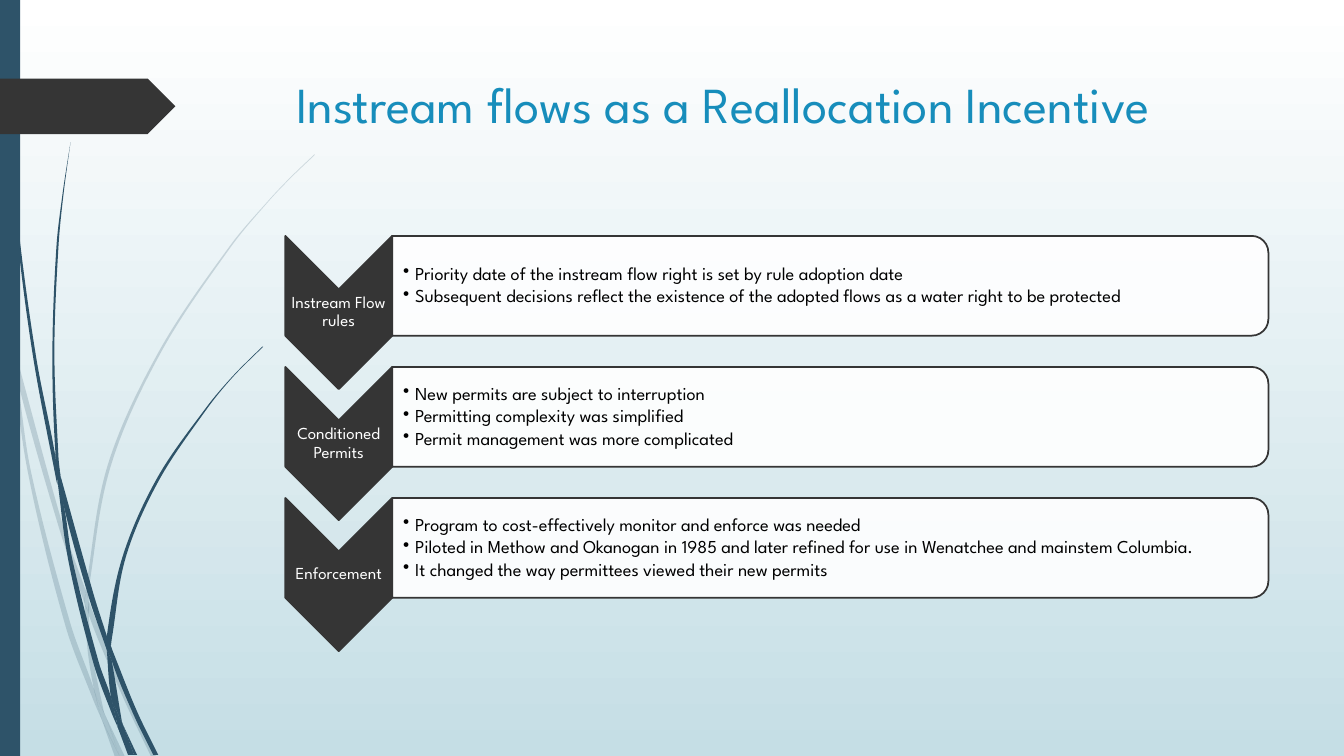
from dataclasses import dataclass

import pptx
import pptx.dml.color
import pptx.enum.shapes
import pptx.enum.text
import pptx.oxml
import pptx.oxml.ns
import pptx.util

Inches = pptx.util.Inches
Pt = pptx.util.Pt
Preset = pptx.enum.shapes.MSO_SHAPE
Align = pptx.enum.text.PP_ALIGN
Anchor = pptx.enum.text.MSO_ANCHOR
Edge = tuple[tuple[float, float], ...]

FONT = "League Spartan"
NAVY, CHARCOAL, BLUE, WHITE, BLACK = "2E5369", "353535", "178DBB", "FFFFFF", "000000"
ROW_TOP, ROW_PITCH = 2.34, 1.3
UNITS = 1000  # freeform units per inch


@dataclass(frozen=True)
class Topic:
    label: str
    points: tuple[str, ...]


@dataclass(frozen=True)
class Blade:
    """A piece of grass between two edges, each running downwards."""
    left: Edge
    right: Edge


TOPICS = (
    Topic("Instream Flow rules", (
        "Priority date of the instream flow right is set by rule adoption date",
        "Subsequent decisions reflect the existence of the adopted flows as a water right to be protected",
    )),
    Topic("Conditioned Permits", (
        "New permits are subject to interruption",
        "Permitting complexity was simplified",
        "Permit management was more complicated",
    )),
    Topic("Enforcement", (
        "Program to cost-effectively monitor and enforce was needed",
        "Piloted in Methow and Okanogan in 1985 and later refined for use in Wenatchee and mainstem Columbia.",
        "It changed the way permittees viewed their new permits",
    )),
)

PALE_BLADES = (
    Blade(((0, 2.99), (0.1, 3.44), (0.11, 3.5)), ((0, 2.82), (0.09, 3.22), (0.11, 3.5))),
    Blade(((0.14, 3.45), (0.17, 3.76), (0.58, 5.22), (0.84, 5.99)), ((0.14, 3.45), (0.62, 5.2), (0.85, 5.86))),
    Blade(((0.88, 5.96), (0.88, 6.1), (1.23, 6.94), (1.5, 7.51)),
          ((0.88, 5.96), (0.92, 6.07), (1.27, 6.92), (1.55, 7.51))),
    Blade(((1.05, 7.11), (1.19, 7.51)), ((1.05, 7.11), (1.24, 7.51))),
    Blade(((0.11, 3.5), (0.28, 4.7), (0.65, 6.21), (0.92, 6.93), (1.01, 7.14)),
          ((0.11, 3.5), (0.17, 3.76), (0.31, 4.69), (0.7, 6.19), (0.93, 6.83), (0.99, 7.07), (1.01, 7.14))),
    Blade(((0.84, 5.99), (0.87, 6.46), (0.93, 6.83), (0.96, 6.92), (1.05, 7.11)),
          ((0.84, 5.99), (0.88, 6.08), (0.88, 6.1), (0.91, 6.46), (1.03, 7.06), (1.05, 7.11))),
    Blade(((3.12, 1.53), (2.89, 1.75), (2.68, 1.97), (2.28, 2.44), (1.58, 3.48), (1.07, 4.61), (0.85, 5.84),
           (0.85, 5.86), (0.88, 5.96)),
          ((3.12, 1.54), (2.9, 1.75), (2.68, 1.98), (2.29, 2.45), (1.6, 3.49), (1.1, 4.62), (0.88, 5.84),
           (0.88, 5.96))),
    Blade(((1.01, 7.14), (1.14, 7.51)), ((1.01, 7.14), (1.19, 7.51))),
    Blade(((0.85, 5.86), (0.84, 5.99), (0.88, 6.08)), ((0.85, 5.86), (0.88, 5.96), (0.88, 6.1))),
    Blade(((0.93, 6.83), (0.99, 7.07), (1.01, 7.14), (1.19, 7.51)),
          ((0.93, 6.83), (0.96, 6.92), (1.05, 7.11), (1.19, 7.51))),
)

DARK_BLADES = (
    Blade(((0.03, 0), (0.04, 0.48), (0.07, 1.1), (0.17, 2.33), (0.33, 3.55), (0.56, 4.77), (0.57, 4.81)),
          ((0.04, 0), (0.05, 0.48), (0.08, 1.09), (0.19, 2.32), (0.36, 3.55), (0.55, 4.53), (0.57, 4.81))),
    Blade(((0.6, 4.72), (0.64, 5.05), (0.88, 5.92), (1.06, 6.45)), ((0.6, 4.72), (0.93, 5.9), (1.06, 6.31))),
    Blade(((1.1, 6.41), (1.11, 6.56), (1.32, 7.08), (1.52, 7.49)),
          ((1.1, 6.41), (1.13, 6.49), (1.36, 7.06), (1.57, 7.49))),
    Blade(((0.57, 4.77), (0.68, 5.57), (0.93, 6.59), (1.11, 7.08), (1.17, 7.22)),
          ((0.57, 4.77), (0.64, 5.05), (0.72, 5.56), (0.98, 6.57), (1.1, 6.91), (1.16, 7.17), (1.17, 7.22))),
    Blade(((0.7, 1.41), (0.62, 1.93), (0.56, 2.45), (0.52, 3.49), (0.55, 4.49), (0.6, 4.72)),
          ((0.7, 1.41), (0.63, 1.93), (0.58, 2.45), (0.54, 3.49), (0.58, 4.53), (0.6, 4.72))),
    Blade(((1.22, 7.19), (1.33, 7.49)), ((1.22, 7.19), (1.36, 7.49))),
    Blade(((0.55, 4.49), (0.55, 4.53), (0.57, 4.77), (0.64, 5.05)), ((0.55, 4.49), (0.6, 4.72), (0.64, 5.05))),
    Blade(((2.6, 3.44), (2.31, 3.73), (2.04, 4.05), (1.56, 4.74), (1.22, 5.51), (1.06, 6.31), (1.1, 6.41)),
          ((2.61, 3.44), (2.31, 3.74), (2.05, 4.06), (1.58, 4.76), (1.25, 5.52), (1.11, 6.33), (1.1, 6.41))),
    Blade(((1.17, 7.22), (1.27, 7.49)), ((1.17, 7.22), (1.31, 7.49))),
    Blade(((1.06, 6.45), (1.1, 6.91), (1.16, 7.06), (1.22, 7.19)),
          ((1.06, 6.45), (1.09, 6.51), (1.11, 6.56), (1.21, 7.16), (1.22, 7.19))),
    Blade(((1.06, 6.31), (1.06, 6.45), (1.09, 6.51), (1.11, 6.56)), ((1.06, 6.31), (1.1, 6.41), (1.11, 6.56))),
    Blade(((1.1, 6.91), (1.16, 7.17), (1.17, 7.22), (1.3, 7.49)),
          ((1.1, 6.91), (1.16, 7.06), (1.22, 7.19), (1.33, 7.49))),
)


def rgb(color: str) -> pptx.dml.color.RGBColor:
    return pptx.dml.color.RGBColor.from_string(color)


def paint(shape, fill: str, opacity: int = 100, outline: str | None = None) -> None:
    shape.shadow.inherit = False
    shape.fill.solid()
    shape.fill.fore_color.rgb = rgb(fill)
    if opacity < 100:
        srgb = shape.fill._xPr.find(".//" + pptx.oxml.ns.qn("a:srgbClr"))
        srgb.append(pptx.oxml.parse_xml(f'<a:alpha {pptx.oxml.ns.nsdecls("a")} val="{opacity * 1000}"/>'))
    if outline:
        shape.line.color.rgb = rgb(outline)
        shape.line.width = Pt(1.25)
    else:
        shape.line.fill.background()


def add_preset(slide, preset, left: float, top: float, width: float, height: float):
    return slide.shapes.add_shape(preset, Inches(left), Inches(top), Inches(width), Inches(height))


def add_turned(slide, preset, left: float, top: float, width: float, height: float):
    """Add a shape turned clockwise by 90°, placed by the box it fills once turned."""
    shape = add_preset(slide, preset, left + (width - height) / 2, top + (height - width) / 2, height, width)
    shape.rotation = 90
    return shape


def bezier_points(edge: Edge) -> list[tuple[float, float]]:
    """Give two control points and an end point for each step of a smooth edge."""
    slopes = [(b[0] - a[0]) / (b[1] - a[1]) for a, b in zip(edge[:1] + edge[:-1], edge[1:] + edge[-1:])]
    points = []
    for (x0, y0), (x1, y1), slope0, slope1 in zip(edge, edge[1:], slopes, slopes[1:]):
        third = (y1 - y0) / 3
        points += [(x0 + slope0 * third, y0 + third), (x1 - slope1 * third, y1 - third), (x1, y1)]
    return points


def add_blade(slide, blade: Blade, opacity: int) -> None:
    tip, foot = blade.left[-1], blade.right[-1]
    outline = [*bezier_points(blade.left), tip, foot, foot, *bezier_points(blade.right[::-1])]
    start_x, start_y = blade.left[0]
    builder = slide.shapes.build_freeform(start_x * UNITS, start_y * UNITS, scale=Inches(1) / UNITS)
    builder.add_line_segments([(x * UNITS, y * UNITS) for x, y in outline], close=True)
    shape = builder.convert_to_shape()
    paint(shape, NAVY, opacity)
    lines = list(shape._element.iter(pptx.oxml.ns.qn("a:lnTo")))
    for first in range(0, len(lines), 3):
        curve = pptx.oxml.parse_xml(f'<a:cubicBezTo {pptx.oxml.ns.nsdecls("a")}/>')
        lines[first].addprevious(curve)
        for line in lines[first:first + 3]:
            curve.append(line[0])
            line.getparent().remove(line)


def add_text(slide, left: float, top: float, width: float, height: float, lines: tuple[str, ...],
             size: int, color: str, align=Align.LEFT, anchor=Anchor.MIDDLE, inset: float = 0.01,
             after: float = 0, line_spacing: float = 0.9, bulleted: bool = False) -> None:
    frame = slide.shapes.add_textbox(Inches(left), Inches(top), Inches(width), Inches(height)).text_frame
    frame.word_wrap = True
    frame.vertical_anchor = anchor
    frame.margin_left = Inches(inset)
    frame.margin_top = frame.margin_right = frame.margin_bottom = Inches(0.01)
    for i, line in enumerate(lines):
        paragraph = frame.paragraphs[0] if i == 0 else frame.add_paragraph()
        paragraph.alignment = align
        paragraph.line_spacing = line_spacing
        paragraph.space_after = Pt(after)
        if bulleted:
            properties = paragraph._p.get_or_add_pPr()
            properties.set("marL", str(Inches(0.12)))
            properties.set("indent", str(-Inches(0.12)))
            properties.append(pptx.oxml.parse_xml(f'<a:buChar {pptx.oxml.ns.nsdecls("a")} char="•"/>'))
        run = paragraph.add_run()
        run.text = line
        run.font.name, run.font.size, run.font.color.rgb = FONT, Pt(size), rgb(color)


def add_topic(slide, topic: Topic, top: float) -> None:
    paint(add_turned(slide, Preset.CHEVRON, 2.83, top, 1.06, 1.52), CHARCOAL, outline=CHARCOAL)
    add_text(slide, 2.83, top + 0.53, 1.06, 0.46, (topic.label,), 12, WHITE, Align.CENTER, after=4)
    paint(add_turned(slide, Preset.ROUND_2_SAME_RECTANGLE, 3.89, top, 8.69, 0.99), WHITE, 90, CHARCOAL)
    add_text(slide, 3.9, top + 0.05, 8.64, 0.89, topic.points, 13, BLACK, inset=0.1, after=2, bulleted=True)


def main() -> None:
    deck = pptx.Presentation()
    deck.slide_width, deck.slide_height = Inches(13.33), Inches(7.5)
    slide = deck.slides.add_slide(deck.slide_layouts[6])
    sky = slide.background.fill
    sky.gradient()
    sky.gradient_angle = 270
    for stop, color, position in zip(sky.gradient_stops, (WHITE, "C5DEE5"), (0, 1)):
        stop.color.rgb, stop.position = rgb(color), position

    for blades, opacity in ((PALE_BLADES, 20), (DARK_BLADES, 100)):
        for blade in blades:
            add_blade(slide, blade, opacity)
    paint(add_preset(slide, Preset.RECTANGLE, 0, 0, 0.2, 7.5), NAVY)
    paint(add_preset(slide, Preset.PENTAGON, 0, 0.78, 1.74, 0.55), CHARCOAL)
    add_text(slide, 2.84, 0.72, 9.75, 1.36, ("Instream flows as a Reallocation Incentive",),
             36, BLUE, anchor=Anchor.TOP, inset=0.1, line_spacing=1)
    for row, topic in enumerate(TOPICS):
        add_topic(slide, topic, ROW_TOP + row * ROW_PITCH)
    deck.save("out.pptx")


if __name__ == "__main__":
    main()
